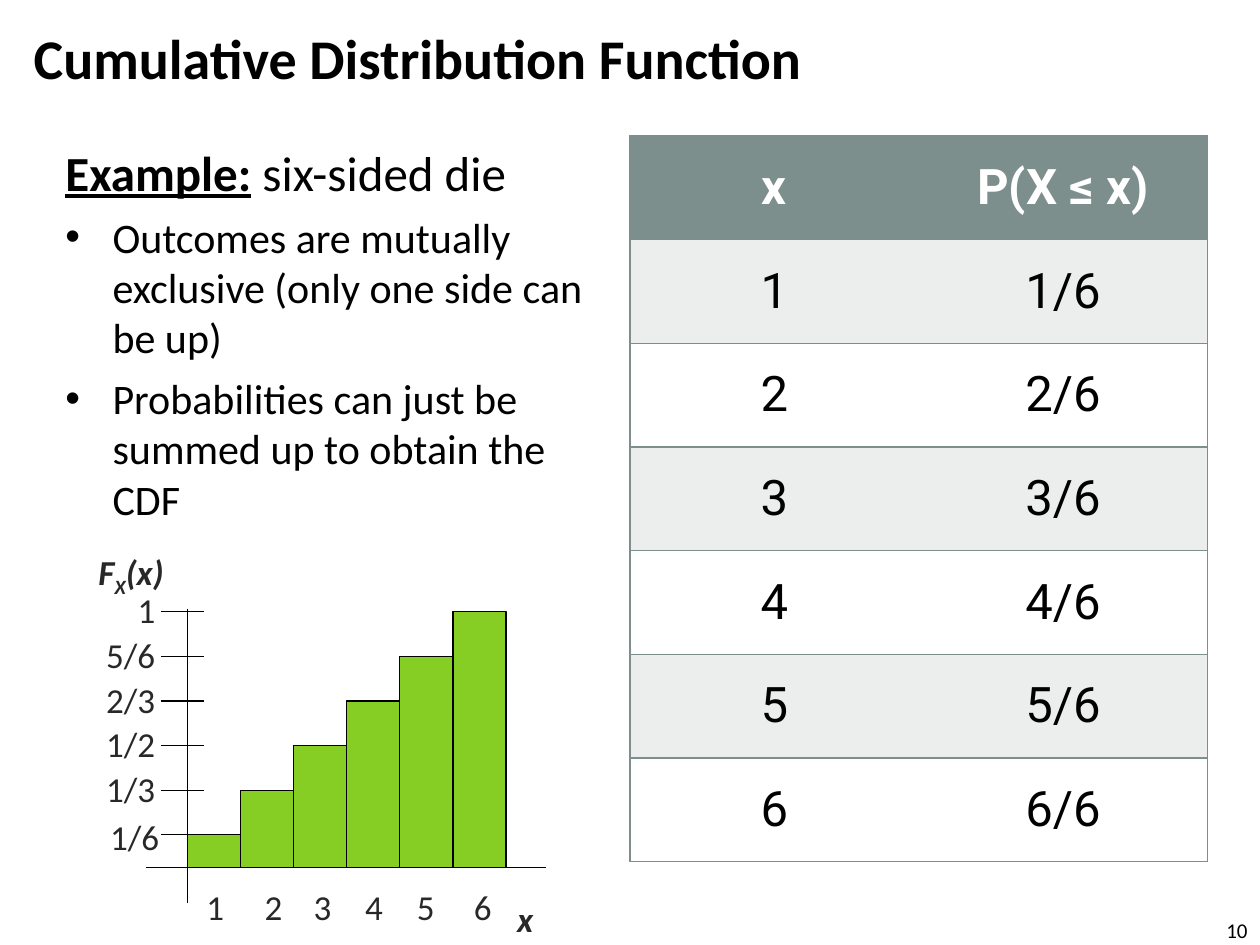
from lxml import etree
from pptx import Presentation
from pptx.dml.color import RGBColor
from pptx.enum.shapes import MSO_CONNECTOR, MSO_SHAPE
from pptx.enum.text import MSO_ANCHOR, PP_ALIGN
from pptx.oxml.ns import qn
from pptx.util import Cm, Pt

LEFT, CENTER, RIGHT = PP_ALIGN.LEFT, PP_ALIGN.CENTER, PP_ALIGN.RIGHT
TOP, MIDDLE = MSO_ANCHOR.TOP, MSO_ANCHOR.MIDDLE
RECTANGLE = MSO_SHAPE.RECTANGLE
STRAIGHT = MSO_CONNECTOR.STRAIGHT

BLACK, WHITE, CHARCOAL = "000000", "FFFFFF", "282828"
SLATE, PALE, GREEN = "7D8F8C", "ECEEEE", "86CE24"


def color(value):
    return RGBColor.from_string(value)


class SlideBuilder:
    font_name = "Calibri"
    line_width = Pt(0.75)

    def __init__(self, page):
        self.page = page

    def style(self, para, size, ink=BLACK, align=LEFT, bold=False,
              italic=False, font=None):
        para.alignment = align
        para.font.name = font or self.font_name
        para.font.size = Pt(size)
        para.font.color.rgb = color(ink)
        para.font.bold = bold
        para.font.italic = italic

    def box(self, left, top, width, height, anchor=TOP, inset=True):
        frame = self.page.shapes.add_textbox(
            Cm(left), Cm(top), Cm(width), Cm(height)).text_frame
        frame.word_wrap = True
        frame.vertical_anchor = anchor
        if not inset:
            frame.margin_left = frame.margin_right = 0
            frame.margin_top = frame.margin_bottom = 0
        return frame

    def text(self, place, words, size, anchor=TOP, inset=True, **look):
        para = self.box(*place, anchor=anchor, inset=inset).paragraphs[0]
        para.text = words
        self.style(para, size, **look)
        return para

    def bullet(self, frame, words, size):
        para = frame.add_paragraph()
        para.text = words
        props = para._p.get_or_add_pPr()
        props.set("marL", str(Cm(0.95)))
        props.set("indent", str(-Cm(0.95)))
        etree.SubElement(props, qn("a:buFont")).set("typeface", "Arial")
        etree.SubElement(props, qn("a:buChar")).set("char", "•")
        para.space_before = Pt(5.8)
        self.style(para, size)

    def bar(self, left, top, width, height):
        shape = self.page.shapes.add_shape(
            RECTANGLE, Cm(left), Cm(top), Cm(width), Cm(height))
        shape.shadow.inherit = False
        shape.fill.solid()
        shape.fill.fore_color.rgb = color(GREEN)
        shape.line.color.rgb = color(BLACK)
        shape.line.width = self.line_width

    def line(self, x1, y1, x2, y2):
        rule = self.page.shapes.add_connector(
            STRAIGHT, Cm(x1), Cm(y1), Cm(x2), Cm(y2))
        rule.line.color.rgb = color(BLACK)
        rule.line.width = self.line_width
        etree.SubElement(rule._element.spPr, qn("a:effectLst"))

    def borders(self, cell, sides):
        props = cell._tc.get_or_add_tcPr()
        for index, side in enumerate(("lnL", "lnR", "lnT", "lnB")):
            border = etree.Element(qn("a:" + side))
            if side in sides:
                border.set("w", str(Pt(1)))
                fill = etree.SubElement(border, qn("a:solidFill"))
                etree.SubElement(fill, qn("a:srgbClr")).set("val", SLATE)
            else:
                border.set("w", "0")
                etree.SubElement(border, qn("a:noFill"))
            props.insert(index, border)

    def table(self, left, top, column_width, row_height, rows):
        columns = len(rows[0])
        table = self.page.shapes.add_table(
            len(rows), columns, Cm(left), Cm(top),
            Cm(column_width * columns), Cm(row_height * len(rows))).table
        for column in table.columns:
            column.width = Cm(column_width)
        for r, values in enumerate(rows):
            table.rows[r].height = Cm(row_height)
            header = r == 0
            fill = SLATE if header else (PALE if r % 2 else WHITE)
            for c, value in enumerate(values):
                cell = table.cell(r, c)
                cell.vertical_anchor = MIDDLE
                cell.fill.solid()
                cell.fill.fore_color.rgb = color(fill)
                self.borders(cell, ("lnT", "lnB", "lnR" if c else "lnL"))
                para = cell.text_frame.paragraphs[0]
                para.text = value
                self.style(para, 28, WHITE if header else BLACK, CENTER,
                           bold=header, font="Roboto")


def main():
    deck = Presentation()
    deck.slide_width, deck.slide_height = Cm(25.4), Cm(19.05)
    slide = SlideBuilder(deck.slides.add_slide(deck.slide_layouts[6]))

    # Title
    slide.text((0.43, 0.2, 18.62, 1.9), "Cumulative Distribution Function",
               32, anchor=MIDDLE, bold=True)

    # Example and its bullets
    body = slide.box(1.07, 2.74, 11.23, 14.78)
    para = body.paragraphs[0]
    slide.style(para, 28)
    span = para.add_run()
    span.text = "Example:"
    span.font.bold = span.font.underline = True
    para.add_run().text = " six-sided die"
    for words in ("Outcomes are mutually exclusive (only one side can be up)",
                  "Probabilities can just be summed up to obtain the CDF"):
        slide.bullet(body, words, 24)

    # Table of cumulative probabilities
    slide.table(12.7, 2.74, 5.82, 2.09,
                [("x", "P(X ≤ x)")]
                + [(str(n), f"{n}/6") for n in range(1, 7)])

    # Bars
    axis_x, axis_y = 3.78, 17.49
    bar_width, step, first_top = 1.07, 0.9, 16.83
    tops = [first_top - step * i for i in range(6)]
    for i, top in enumerate(tops):
        slide.bar(axis_x + bar_width * i, top, bar_width, axis_y - top)

    # Axes
    slide.line(axis_x, 12.27, axis_x, 18.21)
    slide.line(2.95, axis_y, 11, axis_y)

    # Ticks and labels of the vertical axis; the lowest label sits lower
    label_look = dict(inset=False, ink=CHARCOAL, align=RIGHT)
    for i, (words, top) in enumerate(
            zip(("1/6", "1/3", "1/2", "2/3", "5/6", "1"), tops)):
        slide.line(3.25, top, 4.11, top)
        nudge = 0.08 if i == 0 else 0
        slide.text((2.01 + nudge, top - 0.46 + nudge, 1.12, 0.53),
                   words, 20, **label_look)

    # Labels of the horizontal axis, by right edge
    for n, right in enumerate((4.52, 5.69, 6.68, 7.72, 8.76, 9.91), 1):
        slide.text((right - 0.5, 17.85, 0.5, 0.53), str(n), 20, **label_look)

    # Axis names
    name_look = dict(ink=CHARCOAL, align=RIGHT, bold=True, italic=True)
    slide.text((9.5, 17.96, 1.5, 1.09), "x", 20, **name_look)
    para = slide.text((1.04, 10.97, 2.51, 1.09), "F", 20, **name_look)
    span = para.add_run()
    span.text = "X"
    span._r.get_or_add_rPr().set("baseline", "-25000")
    para.add_run().text = "(x)"

    # Page number
    slide.text((19.05, 18.47, 6.35, 0.58), "10", 12, anchor=MIDDLE,
               align=RIGHT)

    deck.save("out.pptx")


if __name__ == "__main__":
    main()
